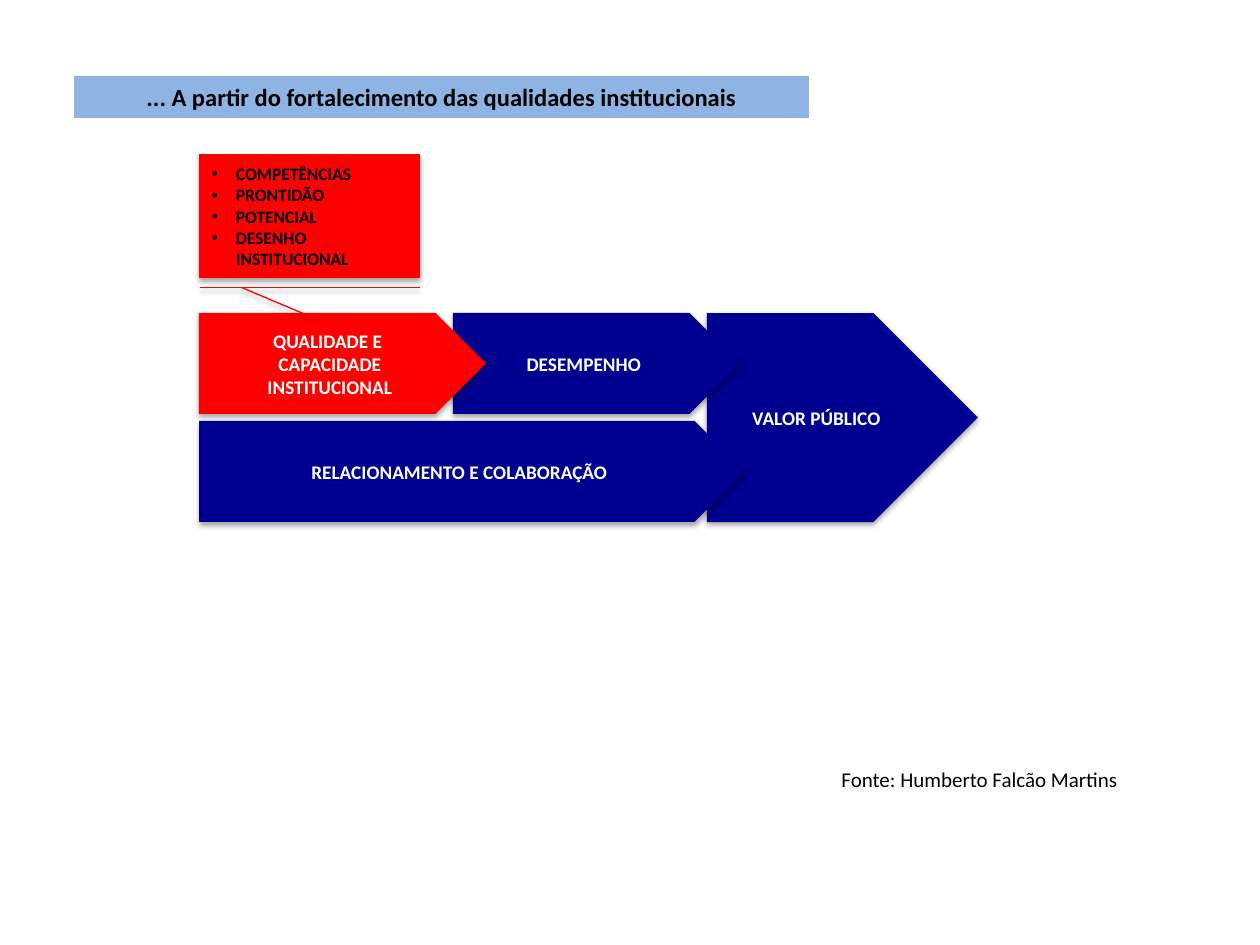
from lxml import etree
from pptx import Presentation
from pptx import util as u
from pptx.dml.color import RGBColor
from pptx.enum import shapes, text
from pptx.oxml.ns import qn

PX = u.Inches(1) / 126
COLORS = {"navy": "000090", "red": "FF0000", "sky": "8EB4E3", "black": "000000", "white": "FFFFFF"}
ARROWS = [
    ((707, 313, 271, 209), "navy", ["VALOR PÚBLICO"]),
    ((453, 313, 287, 101), "navy", ["DESEMPENHO"]),
    ((199, 421, 546, 101), "navy", ["RELACIONAMENTO E COLABORAÇÃO"]),
    ((199, 313, 287, 101), "red", ["QUALIDADE E ", "CAPACIDADE", "INSTITUCIONAL"]),
]
QUALITIES = ["COMPETÊNCIAS", "PRONTIDÃO", "POTENCIAL", "DESENHO INSTITUCIONAL"]


def px(length):
    """Turn pixels into EMU."""
    return u.Emu(round(length * PX))


def rgb(name):
    """Look up a named colour."""
    return RGBColor.from_string(COLORS[name])


def add_bullet(paragraph, indent=24):
    """Give a paragraph a round bullet with a hanging indent."""
    properties = paragraph._p.get_or_add_pPr()
    properties.set("marL", str(px(indent)))
    properties.set("indent", str(-px(indent)))
    etree.SubElement(properties, qn("a:buFont"), typeface="Arial")
    etree.SubElement(properties, qn("a:buChar"), char="•")


def write(shape, lines, size=11, color="white", bold=True, align="CENTER",
          anchor="MIDDLE", wrap=False, grow=False, bullets=False):
    """Fill a shape with formatted paragraphs."""
    frame = shape.text_frame
    frame.word_wrap = wrap
    frame.vertical_anchor = text.MSO_ANCHOR[anchor]
    if grow:
        frame.auto_size = text.MSO_AUTO_SIZE.SHAPE_TO_FIT_TEXT
    for index, line in enumerate(lines):
        paragraph = frame.add_paragraph() if index else frame.paragraphs[0]
        paragraph.alignment = text.PP_ALIGN[align]
        if bullets:
            add_bullet(paragraph)
        run = paragraph.add_run()
        run.text = line
        run.font.name = "Calibri"
        run.font.size = u.Pt(size)
        run.font.bold = bold
        run.font.color.rgb = rgb(color)


def add_shadow(shape):
    """Cast a soft shadow straight down."""
    effects = shape.element.spPr.find(qn("a:effectLst"))
    shadow = etree.SubElement(effects, qn("a:outerShdw"), blurRad="40000", dist="23000",
                              dir="5400000", rotWithShape="0")
    tint = etree.SubElement(shadow, qn("a:srgbClr"), val=COLORS["black"])
    etree.SubElement(tint, qn("a:alpha"), val="35000")


def add_panel(slide, kind, box, fill, shadow=True):
    """Add a filled preset shape without outline."""
    panel = slide.shapes.add_shape(kind, *map(px, box))
    panel.fill.solid()
    panel.fill.fore_color.rgb = rgb(fill)
    panel.line.fill.background()
    panel.shadow.inherit = False
    if shadow:
        add_shadow(panel)
    return panel


def add_callout(slide, box, lines):
    """Add the callout, turned so that its leader points down."""
    callout = add_panel(slide, shapes.MSO_SHAPE.LINE_CALLOUT_1_BORDER_AND_ACCENT_BAR, box, "red")
    for index, value in enumerate((0.19, -0.08, 0.52, -0.33)):
        callout.adjustments[index] = value
    callout.line.color.rgb = rgb("red")
    callout.line.width = u.Pt(0.75)
    callout.rotation = 270
    callout.element.txBody.bodyPr.set("vert", "vert")
    write(callout, lines, size=10, color="black", align="LEFT", wrap=True, bullets=True)


def main():
    """Build the slide and save it."""
    deck = Presentation()
    deck.slide_width, deck.slide_height = u.Inches(10), u.Inches(7.5)
    slide = deck.slides.add_slide(deck.slide_layouts[6])

    for box, fill, lines in ARROWS:
        write(add_panel(slide, shapes.MSO_SHAPE.PENTAGON, box, fill), lines)
    add_callout(slide, (248, 106, 123, 220), QUALITIES)

    title = add_panel(slide, shapes.MSO_SHAPE.RECTANGLE, (74, 76, 735, 42), "sky", shadow=False)
    write(title, ["... A partir do fortalecimento das qualidades institucionais"],
          size=14, color="black", anchor="TOP", wrap=True, grow=True)
    source = slide.shapes.add_textbox(*map(px, (825, 760, 305, 38)))
    write(source, ["Fonte: Humberto Falcão Martins"], size=12, color="black",
          bold=False, align="RIGHT", anchor="TOP", grow=True)
    deck.save("out.pptx")


if __name__ == "__main__":
    main()
